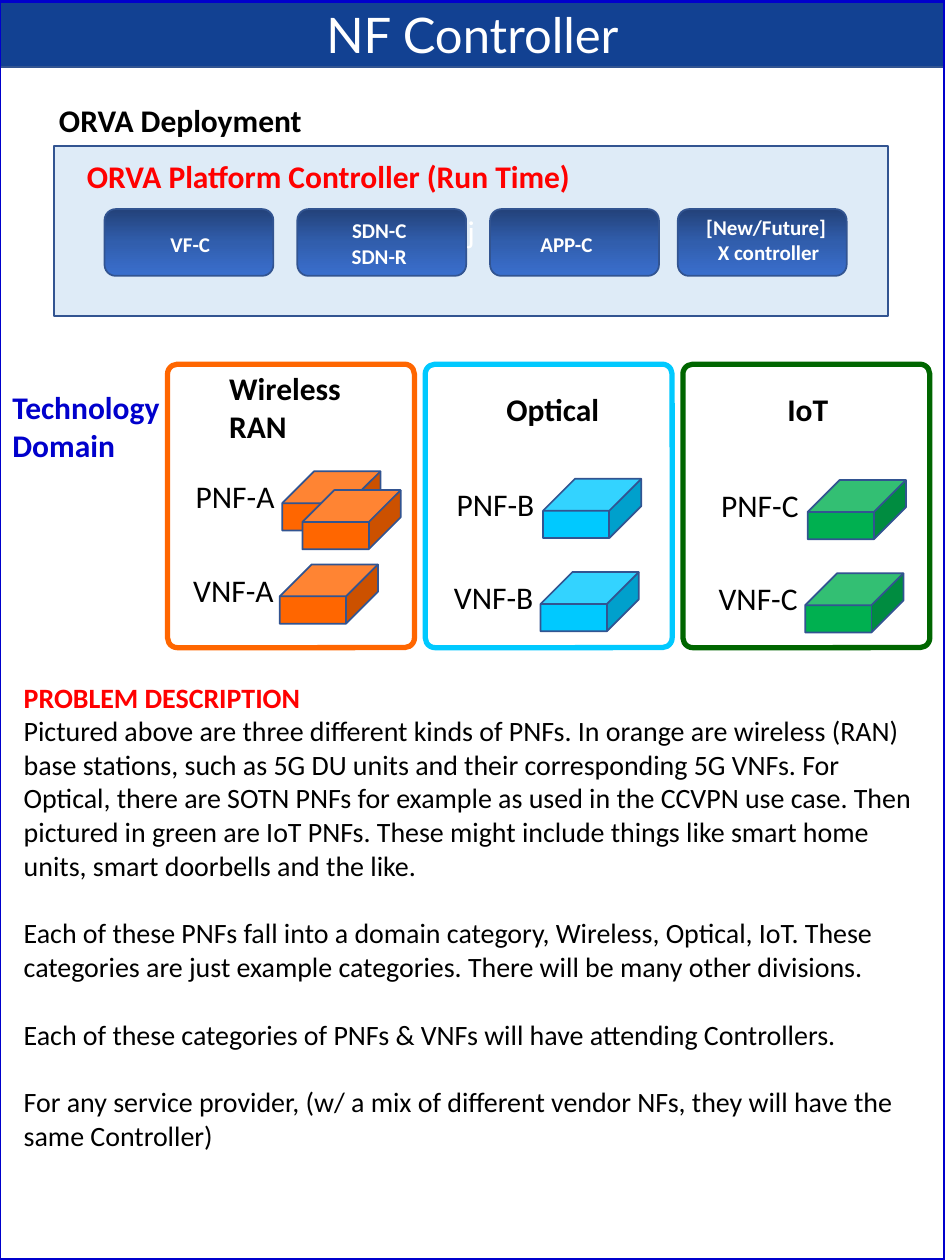
from copy import deepcopy

from pptx import Presentation
from pptx.dml.color import RGBColor
from pptx.enum.shapes import MSO_SHAPE
from pptx.enum.text import MSO_ANCHOR, PP_ALIGN
from pptx.oxml.ns import qn
from pptx.util import Inches, Pt

RECTANGLE, ROUNDED, CUBE = MSO_SHAPE.RECTANGLE, MSO_SHAPE.ROUNDED_RECTANGLE, MSO_SHAPE.CUBE
LEFT, CENTER = PP_ALIGN.LEFT, PP_ALIGN.CENTER
TOP, MIDDLE = MSO_ANCHOR.TOP, MSO_ANCHOR.MIDDLE

BLACK = RGBColor(0x00, 0x00, 0x00)
WHITE = RGBColor(0xFF, 0xFF, 0xFF)
RED = RGBColor(0xFF, 0x00, 0x00)
BLUE = RGBColor(0x00, 0x00, 0xCC)
BANNER = RGBColor(0x12, 0x41, 0x92)
OUTLINE = RGBColor(0x32, 0x54, 0x91)
PANEL = RGBColor(0xDE, 0xEB, 0xF7)
ORANGE = RGBColor(0xFF, 0x66, 0x00)
CYAN = RGBColor(0x00, 0xC9, 0xFF)
GREEN = RGBColor(0x00, 0xB0, 0x50)
DARK_GREEN = RGBColor(0x00, 0x66, 0x00)
GRADIENT = (
    (0, RGBColor(0x23, 0x42, 0x7A)),
    (0.5, RGBColor(0x31, 0x5E, 0xAD)),
    (1, RGBColor(0x3A, 0x6F, 0xCE)),
)

COLUMNS, ROWS = 75, 100

CONTROLLERS = (
    (8.3, ["VF-C"], (12.5, 17.9, 5.2, 3)),
    (23.6, ["SDN-C", "SDN-R"], (26.9, 16.8, 6.4, 5)),
    (38.9, ["APP-C"], (40.7, 17.9, 8.5, 3)),
    (53.8, ["[New/Future] ", "X controller"], (55, 16.5, 12, 5)),
)

DOMAINS = (
    ("A", ["Wireless", "RAN"], (17.2, 28.8, 10.9, 7.1), ORANGE, ORANGE, 22.4, 37.4),
    ("B", ["Optical"], (39.2, 30.5, 9.4, 4), CYAN, CYAN, 43.1, 38),
    ("C", ["IoT"], (61.5, 30.5, 5.3, 4), DARK_GREEN, GREEN, 64.1, 38.1),
)

DESCRIPTION = (
    "Pictured above are three different kinds of PNFs. In orange are wireless (RAN) base "
    "stations, such as 5G DU units and their corresponding 5G VNFs. For Optical, there are "
    "SOTN PNFs for example as used in the CCVPN use case. Then pictured in green are IoT PNFs. "
    "These might include things like smart home units, smart doorbells and the like.",
    "Each of these PNFs fall into a domain category, Wireless, Optical, IoT. These categories "
    "are just example categories. There will be many other divisions.",
    "Each of these categories of PNFs & VNFs will have attending Controllers.",
    "For any service provider, (w/ a mix of different vendor NFs, they will have the same "
    "Controller)",
)


def write(frame, lines, size=18, color=BLACK, bold=False, font="Calibri",
          align=LEFT, anchor=TOP, wrap=False):
    frame.word_wrap = wrap
    frame.vertical_anchor = anchor
    for index, line in enumerate(lines):
        paragraph = frame.paragraphs[0] if index == 0 else frame.add_paragraph()
        paragraph.alignment = align
        run = paragraph.add_run()
        run.text = line
        run.font.size = Pt(size)
        run.font.name = font
        run.font.bold = bold
        run.font.color.rgb = color
    return frame


class SlideBuilder:
    """Draws styled elements on a slide divided into columns and rows."""

    def __init__(self, presentation):
        self.slide = presentation.slides.add_slide(presentation.slide_layouts[6])
        self.column = presentation.slide_width / COLUMNS
        self.row = presentation.slide_height / ROWS

    def place(self, left, top, width, height):
        return (round(left * self.column), round(top * self.row),
                round(width * self.column), round(height * self.row))

    def shape(self, kind, box, fill=None, line=OUTLINE, weight=1, adjustment=None):
        shape = self.slide.shapes.add_shape(kind, *self.place(*box))
        shape.shadow.inherit = False
        if fill is None:
            shape.fill.background()
        else:
            shape.fill.solid()
            shape.fill.fore_color.rgb = fill
        shape.line.color.rgb = line
        shape.line.width = Pt(weight)
        if adjustment is not None:
            shape.adjustments[0] = adjustment
        return shape

    def button(self, box):
        shape = self.shape(ROUNDED, box)
        shape.fill.gradient()
        shape.fill.gradient_angle = 270
        stop_list = shape.element.spPr.find(qn("a:gradFill")).find(qn("a:gsLst"))
        stop_list.append(deepcopy(stop_list[0]))
        for stop, (position, color) in zip(shape.fill.gradient_stops, GRADIENT):
            stop.position = position
            stop.color.rgb = color

    def text(self, box, lines, **style):
        textbox = self.slide.shapes.add_textbox(*self.place(*box))
        return write(textbox.text_frame, lines, **style)

    def cube(self, left, top, color):
        self.shape(CUBE, (left, top, 7.8, 4.7), color, adjustment=0.54)

    def device(self, name, left, top, color):
        self.cube(left, top, color)
        self.text((left - 7.85, top, 8.7, 4), [name])


def main():
    presentation = Presentation()
    presentation.slide_width = Inches(7.5)
    presentation.slide_height = Inches(10)
    builder = SlideBuilder(presentation)

    builder.shape(RECTANGLE, (0, 0.1, 75, 5.2), BANNER)
    builder.text((17.5, -0.1, 40, 5.7), ["NF Controller"], size=28, color=WHITE,
                 font="Lato", align=CENTER)
    builder.shape(RECTANGLE, (-0.1, 0.1, 75.1, 99.9), line=BLUE, weight=2.25)

    builder.text((3.7, 7.5, 21.7, 4), ["ORVA Deployment"], bold=True)
    panel = builder.shape(RECTANGLE, (4.3, 11.6, 66.2, 13.5), PANEL)
    write(panel.text_frame, ["j"], color=WHITE, align=CENTER, anchor=MIDDLE)
    builder.text((5.9, 12, 41.1, 4), ["ORVA Platform Controller (Run Time)"],
                 color=RED, bold=True)
    for left, lines, label_box in CONTROLLERS:
        builder.button((left, 16.6, 13.4, 5.3))
        builder.text(label_box, lines, size=12, color=WHITE, bold=True, align=CENTER)

    builder.text((0, 30.3, 13.8, 7.1), ["Technology", "Domain"], color=BLUE, bold=True)
    for index, (letter, title, title_box, border, color, left, top) in enumerate(DOMAINS):
        builder.shape(ROUNDED, (13.3 + index * 20.45, 28.9, 19.6, 22.5), line=border,
                      weight=3, adjustment=0.04)
        builder.text(title_box, title, bold=True)
        builder.device(f"PNF-{letter}", left, top, color)
        builder.device(f"VNF-{letter}", left - 0.2, top + 7.4, color)
    builder.cube(24, 38.9, ORANGE)

    frame = builder.text((0.9, 53.5, 72.7, 38.7), ["PROBLEM DESCRIPTION", *DESCRIPTION],
                         size=16, wrap=True)
    heading = frame.paragraphs[0].runs[0].font
    heading.bold = True
    heading.color.rgb = RED
    for paragraph in frame.paragraphs[2:]:
        paragraph.space_before = Pt(19.5)

    presentation.save("out.pptx")


if __name__ == "__main__":
    main()
